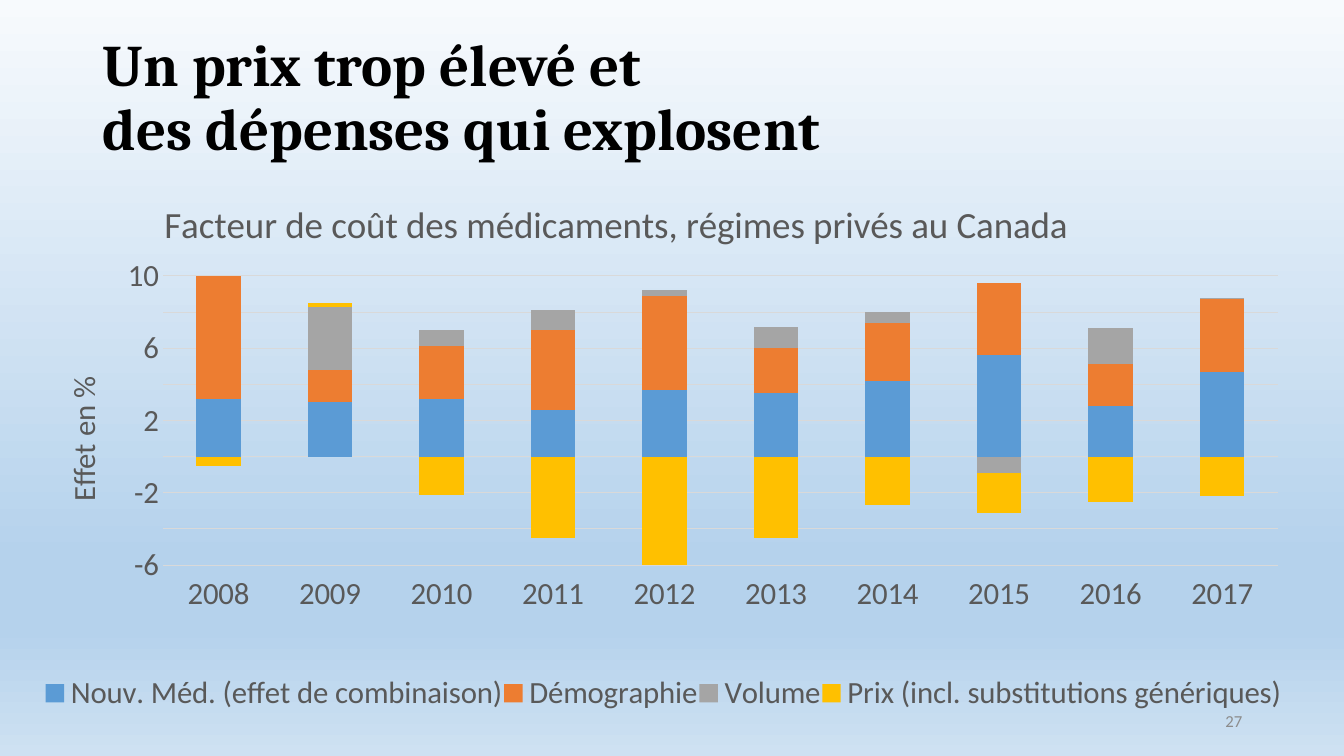
from dataclasses import dataclass

from lxml import etree
from pptx import Presentation
from pptx.chart.data import CategoryChartData
from pptx.dml.color import RGBColor
from pptx.enum.chart import XL_CHART_TYPE, XL_LEGEND_POSITION, XL_TICK_LABEL_POSITION, XL_TICK_MARK
from pptx.enum.text import MSO_ANCHOR, PP_ALIGN
from pptx.oxml.ns import qn
from pptx.util import Inches, Pt


@dataclass(frozen=True)
class Theme:
    heading_font: str = "Cambria"
    body_font: str = "Calibri"
    heading: str = "000000"
    text: str = "595959"
    number: str = "8C8C8C"
    grid: str = "D9D9D9"
    series: tuple = ("5B9BD5", "ED7D31", "A5A5A5", "FFC000")
    background: tuple = ((0, "F7FAFD"), (74, "B5D2EC"), (83, "B5D2EC"), (100, "CEE1F2"))
    heading_size: float = 42
    chart_title_size: float = 26.4
    chart_size: float = 22
    number_size: float = 12


theme = Theme()


def set_font(font, size, color, name=theme.body_font, bold=False):
    font.size = Pt(size)
    font.name = name
    font.bold = bold
    font.color.rgb = RGBColor.from_string(color)


def set_layout(element, **values):
    existing = element.find(qn("c:layout"))
    if existing is not None:
        element.remove(existing)
    layout = etree.Element(qn("c:layout"))
    manual = etree.SubElement(layout, qn("c:manualLayout"))
    for tag, value in values.items():
        etree.SubElement(manual, qn(f"c:{tag}")).set("val", str(value))
    overlay = element.find(qn("c:overlay"))
    if overlay is None:
        element.insert(0, layout)
    else:
        overlay.addprevious(layout)


presentation = Presentation()
presentation.slide_width = Inches(13.33)
presentation.slide_height = Inches(7.5)
slide = presentation.slides.add_slide(presentation.slide_layouts[5])

background_fill = slide.background.fill
background_fill.gradient()
background_fill.gradient_angle = 270
stop_list = next(slide.element.iter(qn("a:gsLst")))
for stop in list(stop_list):
    stop_list.remove(stop)
for position, color in theme.background:
    stop = etree.SubElement(stop_list, qn("a:gs"))
    stop.set("pos", str(position * 1000))
    etree.SubElement(stop, qn("a:srgbClr")).set("val", color)

title = slide.shapes.title
title.left, title.top, title.width, title.height = Inches(0.92), Inches(0.26), Inches(11.5), Inches(1.45)
title.text_frame.text = "Un prix trop élevé et\vdes dépenses qui explosent"
title.text_frame.vertical_anchor = MSO_ANCHOR.MIDDLE
paragraph = title.text_frame.paragraphs[0]
paragraph.alignment = PP_ALIGN.LEFT
paragraph.line_spacing = 0.9
set_font(paragraph.font, theme.heading_size, theme.heading, theme.heading_font, True)

number_box = slide.shapes.add_textbox(Inches(9.42), Inches(6.95), Inches(3), Inches(0.4))
number_box.text_frame.word_wrap = True
number_box.text_frame.vertical_anchor = MSO_ANCHOR.MIDDLE
paragraph = number_box.text_frame.paragraphs[0]
paragraph.text = "27"
paragraph.alignment = PP_ALIGN.RIGHT
set_font(paragraph.font, theme.number_size, theme.number)

cost_factors = {
    "Nouv. Méd. (effet de combinaison)": (3.2, 3, 3.2, 2.6, 3.7, 3.5, 4.2, 5.6, 2.8, 4.7),
    "Démographie": (7.3, 1.8, 2.9, 4.4, 5.2, 2.5, 3.2, 4, 2.3, 4),
    "Volume": (0.2, 3.5, 0.9, 1.1, 0.3, 1.2, 0.6, -0.9, 2, 0.1),
    "Prix (incl. substitutions génériques)": (-0.5, 0.2, -2.1, -4.5, -6, -4.5, -2.7, -2.2, -2.5, -2.2),
}
chart_data = CategoryChartData()
chart_data.categories = [str(year) for year in range(2008, 2018)]
for name, values in cost_factors.items():
    chart_data.add_series(name, values)
chart = slide.shapes.add_chart(
    XL_CHART_TYPE.COLUMN_STACKED, Inches(0.31), Inches(1.8), Inches(12.54), Inches(5.55), chart_data
).chart
set_font(chart.font, theme.chart_size, theme.text)

plot = chart.plots[0]
plot.gap_width = 150
plot.overlap = 100
plot.vary_by_categories = False
for series, color in zip(plot.series, theme.series):
    series.invert_if_negative = False
    series.format.fill.solid()
    series.format.fill.fore_color.rgb = RGBColor.from_string(color)

category_axis, value_axis = chart.category_axis, chart.value_axis
for axis in (category_axis, value_axis):
    axis.major_tick_mark = XL_TICK_MARK.NONE
    axis.minor_tick_mark = XL_TICK_MARK.NONE
    set_font(axis.tick_labels.font, theme.chart_size, theme.text)
category_axis.tick_label_position = XL_TICK_LABEL_POSITION.LOW
value_axis.minimum_scale = -6
value_axis.maximum_scale = 10
value_axis.major_unit = 2
value_axis.has_major_gridlines = True
value_axis.format.line.fill.background()
for line in (category_axis.format.line, value_axis.major_gridlines.format.line):
    line.color.rgb = RGBColor.from_string(theme.grid)
    line.width = Pt(0.75)

chart.has_title = True
chart.has_legend = True
value_axis.has_title = True
for heading, text, size in (
    (chart.chart_title, "Facteur de coût des médicaments, régimes privés au Canada", theme.chart_title_size),
    (value_axis.axis_title, "Effet en %", theme.chart_size),
):
    heading.text_frame.text = text
    set_font(heading.text_frame.paragraphs[0].font, size, theme.text)
axis_title_element = value_axis.axis_title.element if hasattr(value_axis.axis_title, "element") else value_axis.axis_title._element
body_properties = next(axis_title_element.iter(qn("a:bodyPr")))
body_properties.set("rot", "-5400000")
body_properties.set("vert", "horz")

legend = chart.legend
legend.position = XL_LEGEND_POSITION.BOTTOM
legend.include_in_layout = False
set_font(legend.font, theme.chart_size, theme.text)

chart_element = chart.element.find(qn("c:chart"))
set_layout(chart_element.find(qn("c:title")), xMode="edge", yMode="edge", x=0.1, y=0.02)
set_layout(axis_title_element, xMode="edge", yMode="edge", x=0.02, y=0.34)
set_layout(
    chart_element.find(qn("c:plotArea")),
    layoutTarget="inner", xMode="edge", yMode="edge", x=0.104, y=0.169, w=0.882, h=0.517,
)
set_layout(
    chart_element.find(qn("c:legend")),
    xMode="edge", yMode="edge", x=0.01, y=0.87, w=0.98, h=0.09,
)

presentation.save("out.pptx")
